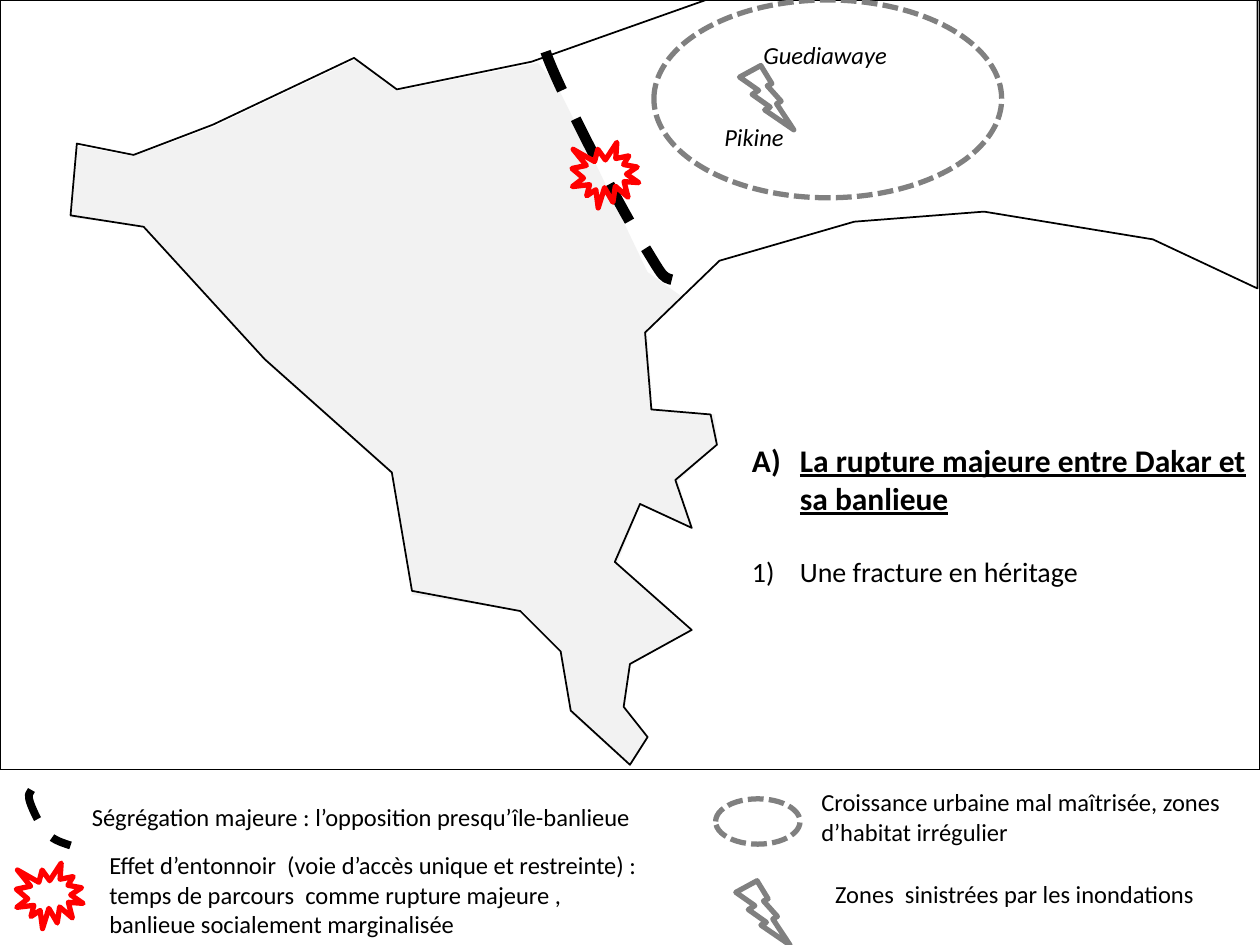
from lxml import etree
from pptx import Presentation
from pptx.dml.color import RGBColor
from pptx.enum.dml import MSO_LINE
from pptx.enum.shapes import MSO_SHAPE
from pptx.enum.text import MSO_AUTO_SIZE
from pptx.oxml.ns import qn
from pptx.util import Inches, Pt

RECT, OVAL = MSO_SHAPE.RECTANGLE, MSO_SHAPE.OVAL
BURST, BOLT = MSO_SHAPE.EXPLOSION1, MSO_SHAPE.LIGHTNING_BOLT
DASH, SHORT = MSO_LINE.DASH, MSO_LINE.SQUARE_DOT
FIT = MSO_AUTO_SIZE.SHAPE_TO_FIT_TEXT
FONT = "Calibri"
BLACK, GRAY, RED, PALE = "000000", "808080", "FF0000", "F2F2F2"

LAND = [
    (4.27, 0.5), (3.16, 0.72), (2.83, 0.47), (1.69, 1.01), (1.06, 1.24),
    (0.61, 1.16), (0.56, 1.73), (1.14, 1.79), (2.14, 2.9), (3.12, 3.77),
    (3.27, 4.72), (4.15, 4.85), (4.45, 5.17), (4.53, 5.66), (4.99, 6.07),
    (5.14, 5.86), (4.96, 5.63), (5, 5.28), (5.48, 5.01), (4.9, 4.47),
    (5.08, 4.01), (5.5, 4.2), (5.38, 3.82), (5.7, 3.52), (5.67, 3.29),
    (5.18, 3.26), (5.14, 2.68), (5.12, 2.64), (5.42, 2.36), (5.14, 2.16),
    (4.69, 1.22), (4.41, 0.66)]
COAST = [
    (0.61, 1.14), (0.56, 1.71), (1.14, 1.8), (2.1, 2.85), (3.11, 3.75),
    (3.27, 4.69), (4.13, 4.85), (4.45, 5.17), (4.53, 5.64), (5, 6.07),
    (5.14, 5.85), (4.95, 5.61), (5, 5.27), (5.49, 5), (4.88, 4.46),
    (5.08, 4), (5.49, 4.19), (5.36, 3.81), (5.69, 3.53), (5.64, 3.29),
    (5.17, 3.25), (5.12, 2.64), (5.71, 2.07), (6.78, 1.76), (7.81, 1.68),
    (9.15, 1.9), (9.98, 2.29), (9.98, -0.03), (5.66, -0.02), (4.22, 0.49),
    (3.15, 0.71), (2.81, 0.46), (1.69, 0.99), (1.06, 1.23)]
# Start point, then two handles and an end point per curve
SPLIT = [(4.33, 0.41), (4.42, 0.68), (4.93, 1.67), (5.13, 1.98),
         (5.32, 2.29), (5.23, 2.17), (5.51, 2.27)]
SPLIT_KEY = [(0.25, 6.27), (0.23, 6.29), (0.22, 6.31), (0.24, 6.37),
             (0.26, 6.43), (0.32, 6.56), (0.38, 6.62),
             (0.43, 6.67), (0.5, 6.69), (0.56, 6.71)]


def color(code):
    return RGBColor.from_string(code)


def style(shape, fill=None, line=None, width=1, dash=None):
    shape.shadow.inherit = False
    if fill:
        shape.fill.solid()
        shape.fill.fore_color.rgb = color(fill)
    else:
        shape.fill.background()
    if line:
        shape.line.color.rgb = color(line)
        shape.line.width = Pt(width)
        if dash:
            shape.line.dash_style = dash
    else:
        shape.line.fill.background()


def outline(slide, points, close=True, **look):
    start, *rest = [(Inches(x), Inches(y)) for x, y in points]
    pen = slide.shapes.build_freeform(*start)
    pen.add_line_segments(rest, close=close)
    shape = pen.convert_to_shape()
    style(shape, **look)
    return shape


def curve(slide, points, width):
    shape = outline(slide, points, close=False, line=BLACK, width=width, dash=DASH)
    # Merge each three straight steps into one Bezier step
    steps = list(shape._element.iter(qn("a:lnTo")))
    for i in range(0, len(steps), 3):
        bend = etree.SubElement(steps[i].getparent(), qn("a:cubicBezTo"))
        for step in steps[i:i + 3]:
            bend.append(step[0])
            step.getparent().remove(step)


def mark(slide, kind, box, **look):
    shape = slide.shapes.add_shape(kind, *map(Inches, box))
    style(shape, **look)


def write(para, text, size=14, bold=False, italic=False, under=False):
    para.text = text
    font = para.font
    font.name, font.size, font.color.rgb = FONT, Pt(size), color(BLACK)
    font.bold, font.italic, font.underline = bold, italic, under


def frame(slide, box, wrap=True):
    body = slide.shapes.add_textbox(*map(Inches, box)).text_frame
    body.word_wrap = wrap
    body.auto_size = FIT
    return body


def label(slide, text, box, wrap=True, italic=False):
    write(frame(slide, box, wrap).paragraphs[0], text, italic=italic)


def number(para, kind):
    props = para._p.get_or_add_pPr()
    indent = Inches(0.38)
    props.set("marL", str(indent))
    props.set("indent", str(-indent))
    etree.SubElement(props, qn("a:buFont"), typeface="+mj-lt")
    etree.SubElement(props, qn("a:buAutoNum"), type=kind)


def title(slide):
    body = frame(slide, (5.87, 3.45, 4.13, 1.28))
    head, item = body.paragraphs[0], body.add_paragraph()
    item.space_before = Pt(22)
    for para, kind in ((head, "alphaUcParenR"), (item, "arabicParenR")):
        number(para, kind)
    write(head, "La rupture majeure entre Dakar et sa banlieue", 18,
          bold=True, under=True)
    write(item, "Une fracture en héritage", 16)


def main():
    deck = Presentation()
    deck.slide_width, deck.slide_height = Inches(10), Inches(7.5)
    slide = deck.slides.add_slide(deck.slide_layouts[6])

    # Map
    outline(slide, LAND, fill=PALE)
    outline(slide, COAST, line=BLACK)
    mark(slide, RECT, (0, 0, 10, 6.11), line=BLACK, width=0.75)

    # Signs on the map and in the key
    curve(slide, SPLIT, 6)
    curve(slide, SPLIT_KEY, 4.5)
    for x, y in ((4.54, 1.13), (0.13, 6.85)):
        mark(slide, BURST, (x, y, 0.53, 0.52), line=RED, width=3)
    for box in ((5.19, 0, 2.76, 1.57), (5.68, 6.34, 0.67, 0.36)):
        mark(slide, OVAL, box, line=GRAY, width=3, dash=SHORT)
    for x, y in ((5.87, 0.52), (5.84, 6.99)):
        mark(slide, BOLT, (x, y, 0.43, 0.51), line=GRAY, width=3)

    # Place names
    label(slide, "Pikine", (5.65, 0.92, 0.69, 0.34), wrap=False, italic=True)
    label(slide, "Guediawaye", (5.96, 0.27, 1.23, 0.34), wrap=False, italic=True)

    # Key
    label(slide, "Ségrégation majeure : l’opposition presqu’île-banlieue",
          (0.63, 6.32, 4.52, 0.34), wrap=False)
    label(slide, "Effet d’entonnoir  (voie d’accès unique et restreinte) :  "
          "temps de parcours  comme rupture majeure , "
          "banlieue socialement marginalisée", (0.77, 6.7, 4.5, 0.81))
    label(slide, "Croissance urbaine mal maîtrisée, zones d’habitat irrégulier",
          (6.42, 6.2, 3.47, 0.57))
    label(slide, "Zones  sinistrées par les inondations", (6.53, 6.93, 3.47, 0.34))

    title(slide)
    deck.save("out.pptx")


if __name__ == "__main__":
    main()
